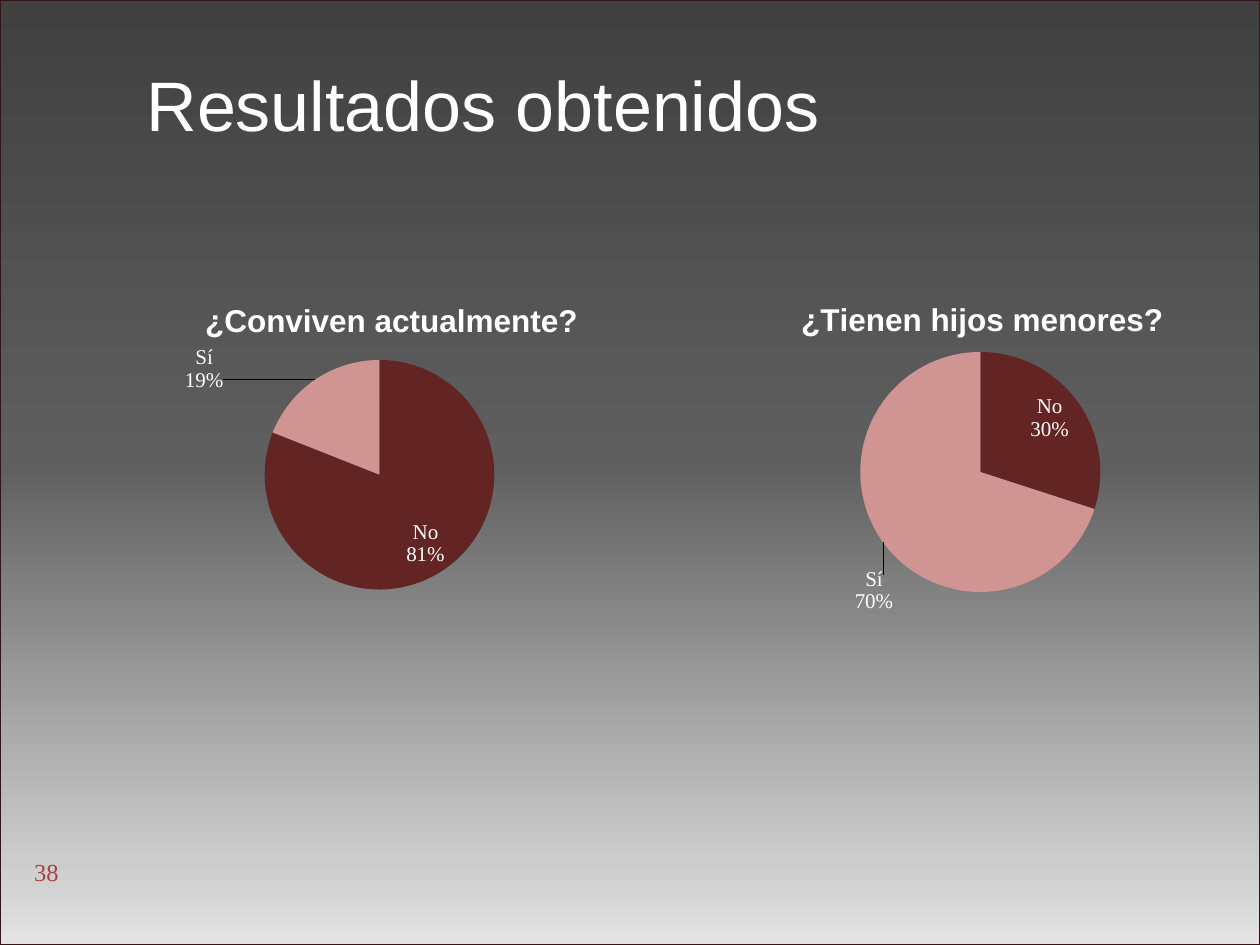
import pptx
import pptx.util
import pptx.dml.color
import pptx.chart.data
import pptx.enum.chart
import pptx.enum.shapes
import pptx.enum.text
import pptx.oxml
import pptx.oxml.ns

PX = 914400 // 126
COLORS = {"white": "FFFFFF", "no": "632523", "si": "D09493", "number": "A9423D", "border": "371413"}
BACKDROP_STOPS = [(0, "404040"), (49, "5F5F5F"), (91, "CCCCCC"), (100, "E5E3E3")]
HEADING = "Resultados obtenidos"
PAGE = "38"
ANSWERS = ["No", "Sí"]
SURVEYS = [
    {"question": "¿Conviven actualmente?", "values": [81, 19], "box": (123, 273, 546, 348),
     "question_at": (0.14, 0.06), "plot": (0.06, 0.25, 0.82, 0.66), "si_shift": (-0.16, 0.05)},
    {"question": "¿Tienen hijos menores?", "values": [30, 70], "box": (699, 265, 536, 348),
     "question_at": (0.18, 0.08), "plot": (0.1, 0.25, 0.85, 0.69), "si_shift": (0.03, 0.08)},
]


def rgb(name):
    return pptx.dml.color.RGBColor.from_string(COLORS[name])


def emu(box):
    return [length * PX for length in box]


def style(font, color, **values):
    for key, value in values.items():
        setattr(font, key, value)
    font.color.rgb = rgb(color)


def layout_xml(place, inner=False):
    target = '<c:layoutTarget val="inner"/>' if inner else ""
    modes = '<c:xMode val="edge"/><c:yMode val="edge"/>' if inner else ""
    sizes = "".join(f'<c:{key} val="{value}"/>' for key, value in zip("xywh", place))
    return pptx.oxml.parse_xml(
        f'<c:layout {pptx.oxml.ns.nsdecls("c")}><c:manualLayout>{target}{modes}{sizes}'
        "</c:manualLayout></c:layout>")


def place_question(title, place):
    layout = layout_xml(place)
    manual = layout[0]
    for index, mode in enumerate(("xMode", "yMode")):
        manual.insert(index, pptx.oxml.parse_xml(
            f'<c:{mode} {pptx.oxml.ns.nsdecls("c")} val="edge"/>'))
    for old in title.findall(pptx.oxml.ns.qn("c:layout")):
        title.remove(old)
    title.find(pptx.oxml.ns.qn("c:tx")).addnext(layout)


def add_survey(slide, survey):
    data = pptx.chart.data.CategoryChartData()
    data.categories = ANSWERS
    data.add_series("Series 1", survey["values"])
    chart = slide.shapes.add_chart(
        pptx.enum.chart.XL_CHART_TYPE.PIE, *emu(survey["box"]), data).chart
    chart.has_legend = False
    style(chart.font, "no", name="Times New Roman", size=pptx.util.Pt(10))

    chart.has_title = True
    question = chart.chart_title.text_frame
    question.text = survey["question"]
    style(question.paragraphs[0].runs[0].font, "white",
          name="Arial", size=pptx.util.Pt(18), bold=True)
    place_question(chart.chart_title._element, survey["question_at"])

    plot_area = chart._chartSpace.chart.plotArea
    for old in plot_area.findall(pptx.oxml.ns.qn("c:layout")):
        plot_area.remove(old)
    plot_area.insert(0, layout_xml(survey["plot"], inner=True))

    chart.plots[0].vary_by_categories = True
    series = chart.plots[0].series[0]
    for index, color in enumerate(("no", "si")):
        fill = series.points[index].format.fill
        fill.solid()
        fill.fore_color.rgb = rgb(color)

    labels = series.data_labels
    label_format = {"show_value": False, "show_category_name": True, "show_percentage": True,
                    "number_format": "0%", "number_format_is_linked": False,
                    "position": pptx.enum.chart.XL_LABEL_POSITION.BEST_FIT}
    for key, value in label_format.items():
        setattr(labels, key, value)
    style(labels.font, "white", name="Times New Roman", size=pptx.util.Pt(12))

    si_label = series.points[1].data_label
    style(si_label.font, "white", name="Times New Roman", size=pptx.util.Pt(12))
    si_label.position = pptx.enum.chart.XL_LABEL_POSITION.OUTSIDE_END
    si = labels._element.find(pptx.oxml.ns.qn("c:dLbl"))
    for key, value in {"showVal": "0", "showCatName": "1", "showPercent": "1"}.items():
        si.find(pptx.oxml.ns.qn(f"c:{key}")).set("val", value)
    si.find(pptx.oxml.ns.qn("c:idx")).addnext(layout_xml(survey["si_shift"]))


def add_backdrop(slide, width, height):
    backdrop = slide.shapes.add_shape(
        pptx.enum.shapes.MSO_SHAPE.RECTANGLE, 0, 0, width, height)
    backdrop.shadow.inherit = False
    backdrop.line.color.rgb = rgb("border")
    backdrop.line.width = pptx.util.Pt(1)
    stops = "".join(f'<a:gs pos="{at * 1000}"><a:srgbClr val="{color}"/></a:gs>'
                    for at, color in BACKDROP_STOPS)
    backdrop._element.spPr.find(pptx.oxml.ns.qn("a:prstGeom")).addnext(pptx.oxml.parse_xml(
        f'<a:gradFill {pptx.oxml.ns.nsdecls("a")} rotWithShape="1"><a:gsLst>{stops}</a:gsLst>'
        '<a:lin ang="5400000" scaled="0"/></a:gradFill>'))
    slide.shapes._spTree.insert(2, backdrop._element)


def write(shape, text, color, size, face, frame_format):
    frame = shape.text_frame
    for key, value in frame_format.items():
        setattr(frame, key, value)
    frame.text = text
    frame.paragraphs[0].alignment = pptx.enum.text.PP_ALIGN.LEFT
    style(frame.paragraphs[0].runs[0].font, color, name=face, size=pptx.util.Pt(size))


def main():
    deck = pptx.Presentation()
    deck.slide_width, deck.slide_height = emu((1260, 945))
    slide = deck.slides.add_slide(deck.slide_layouts[5])
    add_backdrop(slide, deck.slide_width, deck.slide_height)

    heading = slide.shapes.title
    heading.left, heading.top, heading.width, heading.height = emu((134, 55, 706, 97))
    write(heading, HEADING, "white", 40, "Arial",
          {"word_wrap": False, "vertical_anchor": pptx.enum.text.MSO_ANCHOR.TOP})

    for survey in SURVEYS:
        add_survey(slide, survey)

    page = slide.shapes.add_shape(pptx.enum.shapes.MSO_SHAPE.OVAL, *emu((25, 848, 63, 63)))
    page.shadow.inherit = False
    page.fill.background()
    page.line.fill.background()
    margins = dict.fromkeys(("margin_left", "margin_top", "margin_right", "margin_bottom"), 0)
    write(page, PAGE, "number", 14, "Times New Roman",
          {**margins, "vertical_anchor": pptx.enum.text.MSO_ANCHOR.TOP})

    deck.save("out.pptx")


if __name__ == "__main__":
    main()
